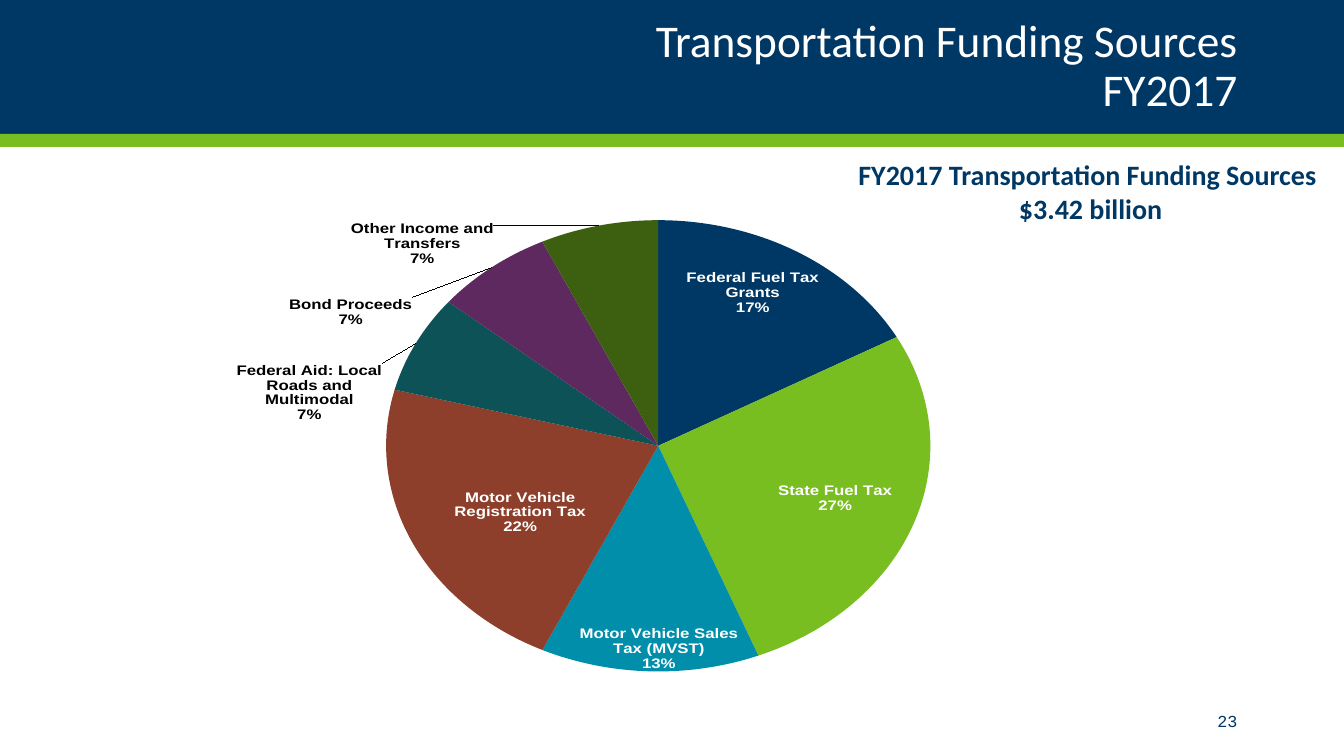
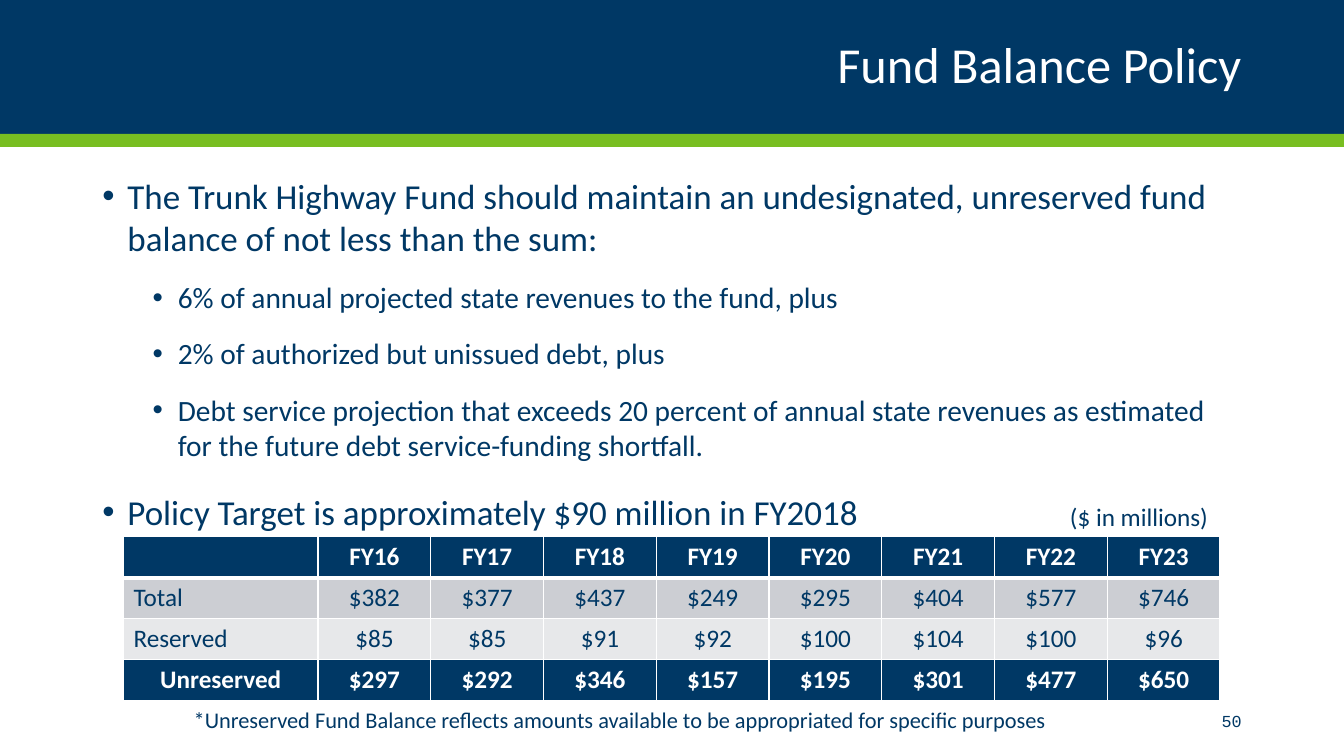
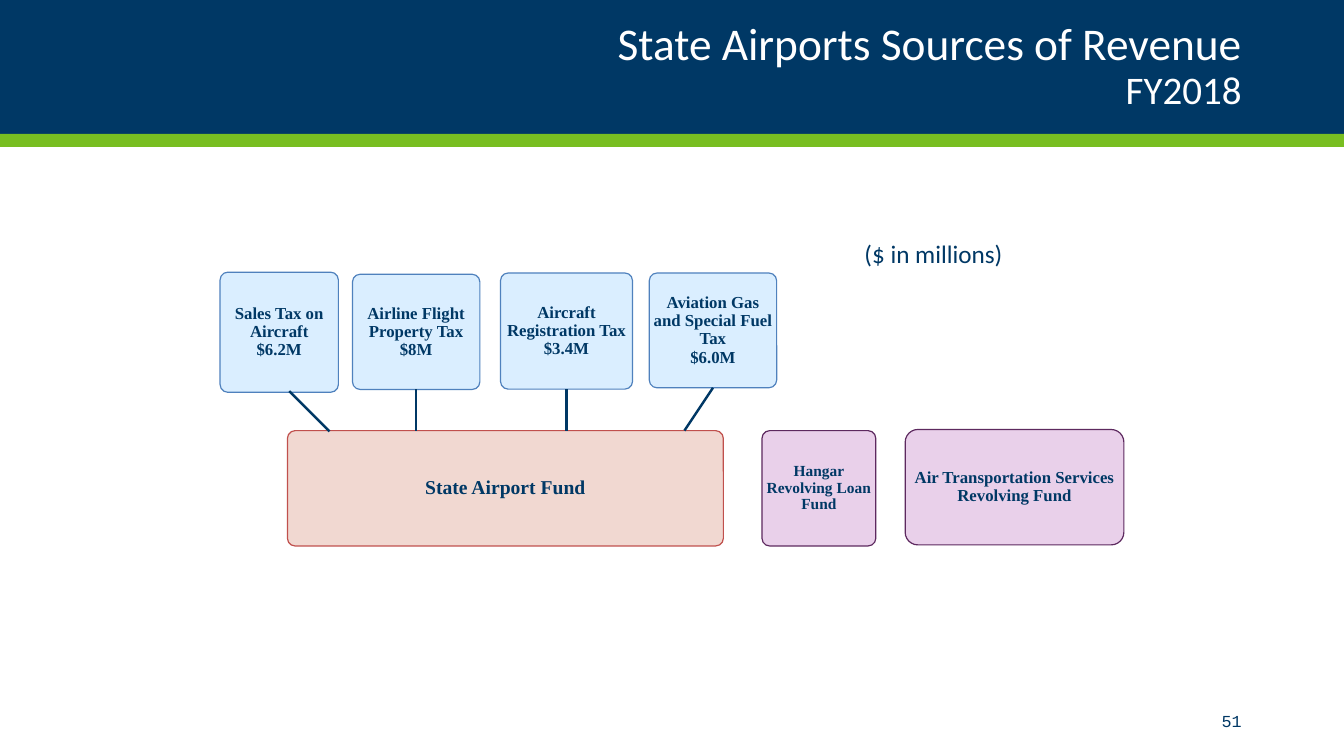
from dataclasses import dataclass
from typing import Any

from lxml.etree import SubElement as Sub
from pptx import Presentation as Deck
from pptx.chart.data import CategoryChartData as Data
from pptx.dml.color import RGBColor as Rgb
from pptx.enum.chart import XL_CHART_TYPE as Kind, XL_LABEL_POSITION as Spot
from pptx.enum.shapes import MSO_CONNECTOR as Link, MSO_SHAPE as Form
from pptx.enum.text import MSO_ANCHOR as Anchor, PP_ALIGN as Align
from pptx.oxml import parse_xml as parse
from pptx.oxml.ns import nsdecls, qn
from pptx.util import Pt

NAVY, GREEN, WHITE, BLACK = "003865", "78BE21", "FFFFFF", "000000"
WIDE, HIGH = 960, 540
SANS = "Calibri"


@dataclass
class Line:
    text: str
    size: float
    font: str = SANS
    color: str = NAVY
    bold: bool = False


@dataclass
class Slice:
    name: str
    value: int
    color: str
    shift: tuple[float, float]
    shade: str = WHITE


@dataclass
class Look:
    fill: str
    edge: str


@dataclass
class Card:
    name: str
    lines: list[str]
    rect: tuple[float, float, float, float]
    look: Look
    size: float = 12
    curve: float = 5.5


@dataclass
class Point:
    text: str
    size: float
    left: float
    before: float


BLUE = Look("D6EDFF", "4F81BD")
ROSE = Look("F0D4CD", "C0504D")
PLUM = Look("E7CBE8", "5D295F")

SLICES = [
    Slice("Federal Fuel Tax Grants", 17, NAVY, (-0.12, 0.15)),
    Slice("State Fuel Tax", 27, GREEN, (-0.15, -0.09)),
    Slice("Motor Vehicle Sales Tax (MVST)", 13, "008EAA", (0.01, -0.11)),
    Slice("Motor Vehicle Registration Tax", 22, "8D3F2B", (0.19, -0.12)),
    Slice("Federal Aid: Local Roads and Multimodal", 7, "0D5257", (-0.03, 0.18), BLACK),
    Slice("Bond Proceeds", 7, "5D295F", (-0.08, 0.14), BLACK),
    Slice("Other Income and Transfers", 7, "3C5F10", (-0.11, 0.1), BLACK),
]

POINTS = [
    Point("The Trunk Highway Fund should maintain an undesignated, unreserved "
          "fund balance of not less than the sum:", 25, 18, 0),
    Point("6% of annual projected state revenues to the fund, plus", 21, 54, 5),
    Point("2% of authorized but unissued debt, plus", 21, 54, 5),
    Point("Debt service projection that exceeds 20 percent of annual state "
          "revenues as estimated for the future debt service-funding shortfall.",
          21, 54, 5),
    Point("Policy Target is approximately $90 million in FY2018", 25, 18, 10),
]

FUNDS = [
    ["", *(f"FY{year}" for year in range(16, 24))],
    ["Total", "$382", "$377", "$437", "$249", "$295", "$404", "$577", "$746"],
    ["Reserved", "$85", "$85", "$91", "$92", "$100", "$104", "$100", "$96"],
    ["Unreserved", "$297", "$292", "$346", "$157", "$195", "$301", "$477", "$650"],
]
SHADES = [NAVY, "CCCED3", "E7E8EA", NAVY]

CARDS = [
    Card("sales", ["Sales Tax on Aircraft", "$6.2M"], (157.2, 194.4, 84.5, 85.8), BLUE),
    Card("flight", ["Airline Flight Property Tax", "$8M"],
         (251.8, 195.9, 91, 82.3), BLUE),
    Card("fund", ["State Airport Fund"], (205.3, 307.6, 311.4, 82.4), ROSE, 14),
    Card("craft", ["Aircraft Registration Tax", "$3.4M"],
         (357.5, 195, 94.3, 83), BLUE),
    Card("gas", ["Aviation Gas and Special Fuel Tax", "$6.0M"],
         (463.8, 195, 91, 82), BLUE),
    Card("loan", ["Hangar Revolving Loan Fund"], (544.3, 307.6, 81.3, 82.4), PLUM, 11),
    Card("air", ["Air Transportation Services Revolving Fund"],
         (646.6, 306.8, 156.2, 82.4), PLUM, 12, 9),
]


def tint(color: str) -> Rgb:
    return Rgb.from_string(color)


def style(thing: Any, **form: Any) -> None:
    for key, value in form.items():
        setattr(thing, key, value)


def ink(font: Any, line: Line) -> None:
    style(font, name=line.font, size=Pt(line.size), bold=line.bold)
    font.color.rgb = tint(line.color)


def write(para: Any, line: Line, **form: Any) -> None:
    run = para.add_run()
    run.text = line.text
    ink(run.font, line)
    style(para, **form)


def paras(frame: Any, count: int) -> list[Any]:
    return [frame.paragraphs[0], *(frame.add_paragraph() for _ in range(count - 1))]


def text(slide: Any, rect: tuple, lines: list[Line], align: Any = Align.LEFT,
         **form: Any) -> Any:
    frame = slide.shapes.add_textbox(*map(Pt, rect)).text_frame
    style(frame, **{"word_wrap": True, **form})
    for para, line in zip(paras(frame, len(lines)), lines):
        write(para, line, alignment=align)
    return frame


def band(slide: Any, top: float, tall: float, color: str) -> None:
    bar = slide.shapes.add_shape(Form.RECTANGLE, *map(Pt, (0, top, WIDE, tall)))
    bar.shadow.inherit = False
    bar.fill.solid()
    bar.fill.fore_color.rgb = tint(color)
    bar.line.fill.background()


def start(deck: Any, page: int, title: list[Line], left: float = 66) -> Any:
    slide = deck.slides.add_slide(deck.slide_layouts[6])
    band(slide, 0, 95.7, NAVY)
    band(slide, 95.7, 9.3, GREEN)
    frame = text(slide, (left, 12, 828, 72), [], vertical_anchor=Anchor.MIDDLE)
    para = frame.paragraphs[0]
    for spot, line in enumerate(title):
        if spot:
            para.add_line_break()
        write(para, line, alignment=Align.RIGHT, line_spacing=0.9)
    text(slide, (left + 713, 500.4, 115, 28.8), [Line(str(page), 12, "Courier New")],
         Align.RIGHT, vertical_anchor=Anchor.MIDDLE)
    return slide


def place(parent: Any, spot: int, **marks: Any) -> None:
    body = "".join(f'<c:{key} val="{value}"/>' for key, value in marks.items())
    parent.insert(spot, parse(
        f'<c:layout {nsdecls("c")}><c:manualLayout>{body}</c:manualLayout></c:layout>'))


def show(node: Any) -> None:
    for key, value in {"showVal": 0, "showCatName": 1, "showPercent": 1}.items():
        node.find(qn(f"c:{key}")).set("val", str(value))
    last = node.find(qn("c:showBubbleSize"))
    if last is None:
        last = node.find(qn("c:showPercent"))
    last.addnext(parse(f'<c:separator {nsdecls("c")}>\n</c:separator>'))


def pie(slide: Any) -> None:
    data = Data()
    data.categories = [part.name for part in SLICES]
    data.add_series("Series 1", [part.value for part in SLICES])
    chart = slide.shapes.add_chart(
        Kind.PIE, *map(Pt, (139.7, 126, 674.6, 388.8)), data).chart
    style(chart, has_title=False, has_legend=False)
    ink(chart.font, Line("", 10, "Arial", BLACK))
    plot = chart.plots[0]
    plot.vary_by_categories = True
    series = plot.series[0]
    labels = series.data_labels
    style(labels, show_value=False, show_category_name=True, show_percentage=True,
          number_format="0%", number_format_is_linked=False, position=Spot.OUTSIDE_END)
    ink(labels.font, Line("", 12, "Arial", NAVY, True))
    for spot, part in enumerate(SLICES):
        point = series.points[spot]
        point.format.fill.solid()
        point.format.fill.fore_color.rgb = tint(part.color)
        label = point.data_label
        ink(label.font, Line("", 12, "Arial", part.shade, True))
        label.position = Spot.OUTSIDE_END
    root = series.data_labels._element
    for node, part in zip(root.findall(qn("c:dLbl")), SLICES):
        show(node)
        place(node, 1, x=part.shift[0], y=part.shift[1])
    lead = root.find(qn("c:showLeaderLines"))
    if lead is None:
        lead = Sub(root, qn("c:showLeaderLines"))
    lead.set("val", "1")
    area = plot._element.getparent()
    for node in area.findall(qn("c:layout")):
        area.remove(node)
    place(area, 0, layoutTarget="inner", xMode="edge", yMode="edge",
          x=0.2, y=0, w=0.58, h=1)


def bullet(para: Any, point: Point) -> None:
    props = para._p.get_or_add_pPr()
    props.set("marL", str(Pt(point.left)))
    props.set("indent", str(Pt(-18)))
    hue = Sub(Sub(props, qn("a:buClr")), qn("a:srgbClr"))
    hue.set("val", NAVY)
    Sub(props, qn("a:buFont")).set("typeface", "Arial")
    Sub(props, qn("a:buChar")).set("char", "•")
    write(para, Line(point.text, point.size),
          space_before=Pt(point.before), space_after=Pt(10))


def edge(cell: Any, base: float) -> None:
    props = cell._tc.get_or_add_tcPr()
    for side, width in {"L": 1, "R": 1, "T": 1, "B": base}.items():
        line = Sub(props, qn(f"a:ln{side}"), w=str(Pt(width)))
        Sub(Sub(line, qn("a:solidFill")), qn("a:srgbClr"), val=WHITE)


def grid(slide: Any) -> None:
    rows, cols = len(FUNDS), len(FUNDS[0])
    table = slide.shapes.add_table(
        rows, cols, *map(Pt, (88.2, 383.5, 783.4, 116.8))).table
    style(table, first_row=False, horz_banding=False)
    for spot, col in enumerate(table.columns):
        col.width = Pt(80.55 if spot else 139)
    for down, row in enumerate(FUNDS):
        dark = SHADES[down] == NAVY
        for side, word in enumerate(row):
            cell = table.cell(down, side)
            edge(cell, 1 if down else 3)
            cell.fill.solid()
            cell.fill.fore_color.rgb = tint(SHADES[down])
            if word:
                write(cell.text_frame.paragraphs[0],
                      Line(word, 18, color=WHITE if dark else NAVY, bold=dark),
                      alignment=Align.CENTER if side or dark else Align.LEFT)


def draw(slide: Any, card: Card) -> Any:
    box = slide.shapes.add_shape(Form.ROUNDED_RECTANGLE, *map(Pt, card.rect))
    box.shadow.inherit = False
    box.adjustments[0] = card.curve / min(card.rect[2:])
    box.fill.solid()
    box.fill.fore_color.rgb = tint(card.look.fill)
    hue = box._element.spPr.find(qn("a:solidFill")).find(qn("a:srgbClr"))
    Sub(hue, qn("a:alpha"), val="90000")
    box.line.color.rgb = tint(card.look.edge)
    box.line.width = Pt(0.85)
    frame = box.text_frame
    sides = ("left", "top", "right", "bottom")
    inset = Pt(2.9 - 0.3 * card.curve)
    style(frame, word_wrap=True, vertical_anchor=Anchor.MIDDLE,
          **{f"margin_{side}": inset for side in sides})
    for para, line in zip(paras(frame, len(card.lines)), card.lines):
        write(para, Line(line, card.size, "Times New Roman", bold=True),
              alignment=Align.CENTER, line_spacing=0.9)
    return box


def join(slide: Any, ends: tuple, box: Any = None) -> None:
    line = slide.shapes.add_connector(Link.STRAIGHT, *map(Pt, ends))
    if box is not None:
        line.begin_connect(box, 2)
    line.line.color.rgb = tint(NAVY)
    line.line.width = Pt(1.75)
    Sub(line._element.spPr, qn("a:effectLst"))


def units(slide: Any, left: float, top: float) -> None:
    text(slide, (left, top, 114.5, 28.8), [Line("($ in millions)", 18)],
         word_wrap=False)


def main() -> None:
    deck = Deck()
    style(deck, slide_width=Pt(WIDE), slide_height=Pt(HIGH))

    slide = start(deck, 23, [Line("Transportation Funding Sources", 32.4, color=WHITE),
                             Line("FY2017", 32.4, color=WHITE)], 63)
    pie(slide)
    text(slide, (598.3, 109, 361.5, 55.4),
         [Line("FY2017 Transportation Funding Sources ", 20, bold=True),
          Line("$3.42 billion", 20, bold=True)], Align.CENTER)

    slide = start(deck, 50, [Line("Fund Balance Policy", 36, color=WHITE)])
    frame = text(slide, (66, 121, 828, 342.7), [])
    for para, point in zip(paras(frame, len(POINTS)), POINTS):
        bullet(para, point)
    grid(slide)
    units(slide, 757.2, 354.6)
    text(slide, (131.3, 500.7, 740, 26.6),
         [Line("*Unreserved Fund Balance reflects amounts available to be "
               "appropriated for specific purposes", 16)])

    slide = start(deck, 51, [Line("State Airports Sources of Revenue", 32.4, color=WHITE),
                             Line("FY2018", 27.9, color=WHITE)])
    boxes = {card.name: draw(slide, card) for card in CARDS}
    units(slide, 610.4, 167)
    join(slide, (206.6, 279.4, 235.4, 308.2))
    for name, end in {"gas": 488.9, "craft": 404.65, "flight": 297.3}.items():
        join(slide, (end, 278, end, 307.6), boxes[name])

    deck.save("out.pptx")


if __name__ == "__main__":
    main()
